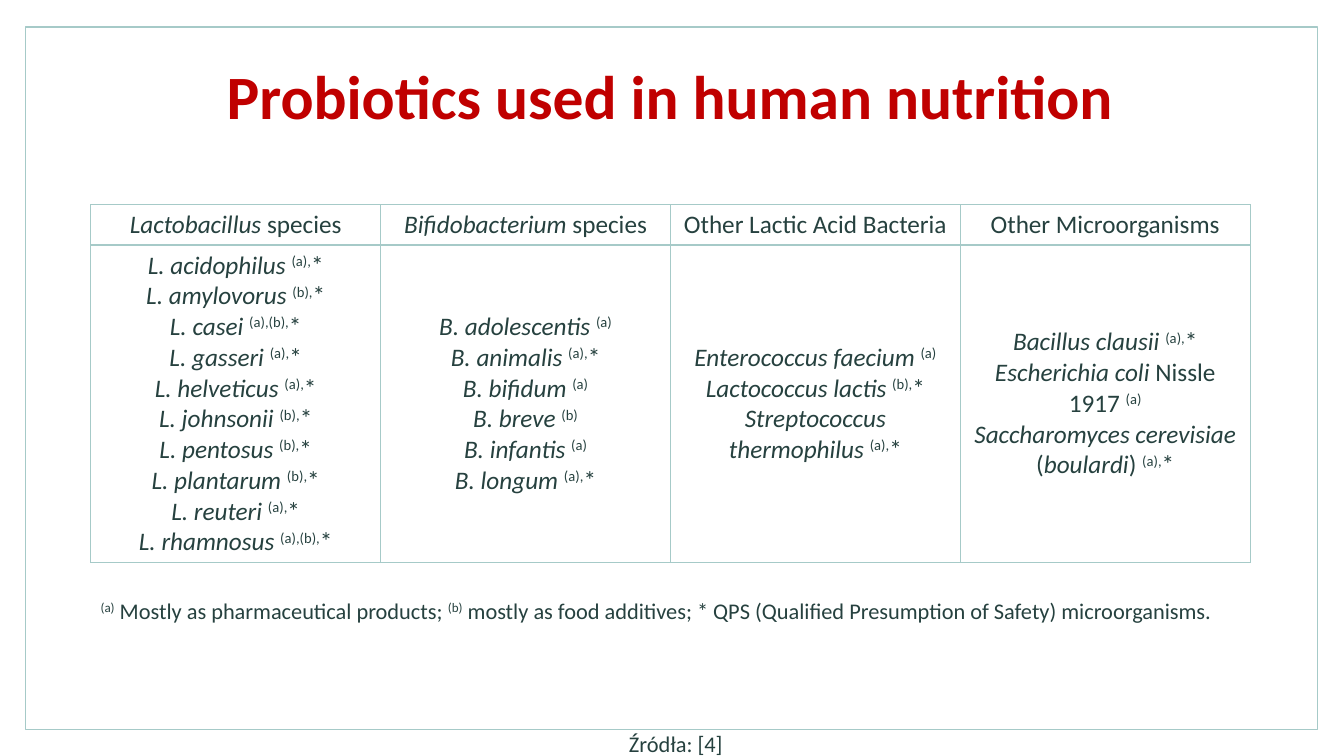
import pptx
import pptx.dml.color
import pptx.enum.shapes
import pptx.enum.text
import pptx.oxml.ns
import pptx.util
from dataclasses import dataclass
from lxml import etree

Inches = pptx.util.Inches
Align = pptx.enum.text.PP_ALIGN
Anchor = pptx.enum.text.MSO_ANCHOR


@dataclass(frozen=True)
class Theme:
    font: str = "Calibri"
    title_color: str = "C00000"
    text_color: str = "26413F"
    line_color: str = "A6CAC8"
    paper_color: str = "FFFFFF"
    title_size: int = 44
    table_size: int = 18
    note_size: int = 16
    line_width: int = 1


theme = Theme()


def rgb(value):
    return pptx.dml.color.RGBColor.from_string(value)


def write(paragraph, text, size, color=theme.text_color, bold=False):
    """Add runs; _..._ marks italics, ^...^ marks superscript."""
    for i, stretch in enumerate(text.split("_")):
        for j, piece in enumerate(stretch.split("^")):
            if not piece:
                continue
            run = paragraph.add_run()
            run.text = piece
            run.font.name = theme.font
            run.font.size = pptx.util.Pt(size)
            run.font.color.rgb = rgb(color)
            run.font.bold = bold
            run.font.italic = i % 2 == 1
            if j % 2:
                run.font._element.set("baseline", "30000")


deck = pptx.Presentation()
deck.slide_width = Inches(13.33)
deck.slide_height = Inches(7.5)
slide = deck.slides.add_slide(deck.slide_layouts[6])

# Frame
frame = slide.shapes.add_shape(
    pptx.enum.shapes.MSO_SHAPE.RECTANGLE,
    Inches(0.25), Inches(0.27), Inches(12.82), Inches(6.97))
frame.shadow.inherit = False
frame.fill.solid()
frame.fill.fore_color.rgb = rgb(theme.paper_color)
frame.line.color.rgb = rgb(theme.line_color)
frame.line.width = pptx.util.Pt(theme.line_width)

# Title
title = slide.shapes.add_textbox(
    Inches(1.25), Inches(0.25), Inches(10.8), Inches(1.48)).text_frame
title.word_wrap = True
title.vertical_anchor = Anchor.MIDDLE
heading = title.paragraphs[0]
heading.alignment = Align.CENTER
heading.line_spacing = 0.9
write(heading, "Probiotics used in human nutrition",
      theme.title_size, theme.title_color, bold=True)

# Table of microorganisms: heading and lines of each column
groups = [
    ("_Lactobacillus _species", [
        "_L. acidophilus _^(a),^*",
        "_L. amylovorus _^(b),^*",
        "_L. casei _^(a),(b),^*",
        "_L. gasseri _^(a),^*",
        "_L. helveticus _^(a),^*",
        "_L. johnsonii _^(b),^*",
        "_L. pentosus _^(b),^*",
        "_L. plantarum _^(b),^*",
        "_L. reuteri _^(a),^*",
        "_L. rhamnosus _^(a),(b),^*",
    ]),
    ("_Bifidobacterium _species", [
        "_B. adolescentis _^(a)^",
        "_B. animalis _^(a),^*",
        "_B. bifidum _^(a)^",
        "_B. breve _^(b)^",
        "_B. infantis _^(a)^",
        "_B. longum _^(a),^*",
    ]),
    ("Other Lactic Acid Bacteria", [
        "_Enterococcus faecium _^(a)^",
        "_Lactococcus lactis _^(b),^*",
        "_Streptococcus thermophilus _^(a),^*",
    ]),
    ("Other Microorganisms", [
        "_Bacillus clausii _^(a),^*",
        "_Escherichia coli _Nissle 1917 ^(a)^",
        "_Saccharomyces cerevisiae_ (_boulardi_) ^(a),^*",
    ]),
]
species = slide.shapes.add_table(
    2, len(groups), Inches(0.9), Inches(2.03), Inches(11.5), Inches(3.55)).table
species.first_row = False
species.horz_banding = False
species.rows[0].height = Inches(0.4)
species.rows[1].height = Inches(3.15)

for column, (group, members) in enumerate(groups):
    for row, lines in enumerate([[group], members]):
        cell = species.cell(row, column)
        cell.vertical_anchor = Anchor.MIDDLE
        listing = cell.text_frame.paragraphs[0]
        listing.alignment = Align.CENTER
        for number, line in enumerate(lines):
            if number:
                listing.add_line_break()
            write(listing, line, theme.table_size)
        # Borders come before the fill in the cell properties
        properties = cell._tc.get_or_add_tcPr()
        for side in ("a:lnL", "a:lnR", "a:lnT", "a:lnB"):
            border = etree.SubElement(properties, pptx.oxml.ns.qn(side),
                                      w=str(pptx.util.Pt(theme.line_width)))
            paint = etree.SubElement(border, pptx.oxml.ns.qn("a:solidFill"))
            etree.SubElement(paint, pptx.oxml.ns.qn("a:srgbClr"),
                             val=theme.line_color)
        cell.fill.background()

# Legend of the marks
legend = slide.shapes.add_textbox(
    Inches(0.9), Inches(5.87), Inches(11.5), Inches(0.64)).text_frame
legend.word_wrap = True
legend.paragraphs[0].alignment = Align.JUSTIFY
write(legend.paragraphs[0],
      "^(a)^ Mostly as pharmaceutical products; ^(b)^ mostly as food additives; "
      "* QPS (Qualified Presumption of Safety) microorganisms.",
      theme.note_size)

# Source reference
reference = slide.shapes.add_textbox(
    Inches(6.14), Inches(7.19), Inches(1.17), Inches(0.37)).text_frame
reference.word_wrap = False
write(reference.paragraphs[0], "Źródła: [4]", theme.note_size)

deck.save("out.pptx")
